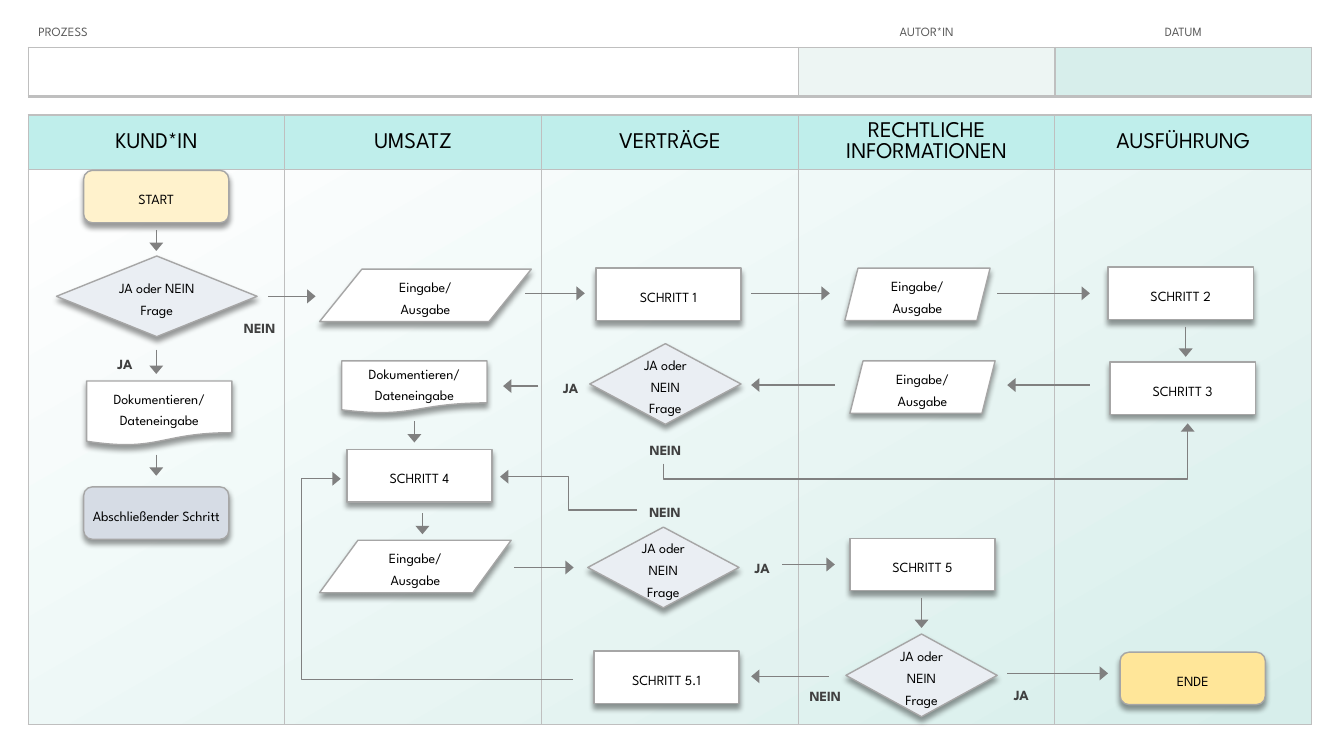
"""Build a swimlane process flowchart slide."""
from lxml import etree
from pptx import Presentation, util as u
from pptx.dml import color
from pptx.enum import shapes, text
from pptx.oxml import ns

COLORS = dict(white="FFFFFF", mint="D7EEEB", pale="EDF5F3", header="BFEEEB",
              grid="BFBFBF", edge="A6A6A6", arrow="808080", black="000000",
              label="404040", caption="595959", start="FFF2CC", end="FFE699",
              final="D6DCE5", decision="EAEEF3")
FONT = "League Spartan"
SHAPE = shapes.MSO_SHAPE
STRAIGHT, ELBOW = shapes.MSO_CONNECTOR.STRAIGHT, shapes.MSO_CONNECTOR.ELBOW
LEFT, LANE = 0.28, 2.546
BOX = (1.44, 0.52)
IO_TEXT = "Eingabe/\vAusgabe"
DOC_TEXT = "Dokumentieren/\nDateneingabe"


def rgb(name):
    return color.RGBColor.from_string(COLORS[name])


def inches(*values):
    return [u.Inches(v) for v in values]


def sub(parent, tag, **attrs):
    return etree.SubElement(parent, ns.qn(tag), attrs)


def write(tf, words, size, ink, bold=False, align=text.PP_ALIGN.CENTER, spacing=None):
    tf.text = words
    for p in tf.paragraphs:
        p.alignment = align
        p.line_spacing = spacing
        for r in p.runs:
            for key, value in dict(name=FONT, size=u.Pt(size), bold=bold).items():
                setattr(r.font, key, value)
            r.font.color.rgb = rgb(ink)


def write_box(sp, words, ink="black", bold=False):
    tf = sp.text_frame
    margins = {f"margin_{side}": u.Inches(0.02) for side in ("left", "right", "top", "bottom")}
    for key, value in dict(margins, word_wrap=True,
                           vertical_anchor=text.MSO_ANCHOR.MIDDLE).items():
        setattr(tf, key, value)
    write(tf, words, 10, ink, bold, spacing=1.3)


def add_node(parent, kind, x, y, words, fill="white", size=BOX):
    sp = parent.add_shape(kind, *inches(x, y, *size))
    sp.fill.solid()
    sp.fill.fore_color.rgb = rgb(fill)
    sp.line.color.rgb = rgb("edge")
    sp.line.width = u.Pt(1)
    sp.shadow.inherit = False
    effects = sp._element.spPr.find(ns.qn("a:effectLst"))
    shadow = sub(effects, "a:outerShdw", blurRad=str(u.Pt(4)), dist=str(u.Pt(3)),
                 dir="5400000", algn="t", rotWithShape="0")
    sub(sub(shadow, "a:srgbClr", val=COLORS["black"]), "a:alpha", val="40000")
    write_box(sp, words)


def add_decision(s, x, y, size, labels):
    group = s.shapes.add_group_shape().shapes
    add_node(group, SHAPE.FLOWCHART_DECISION, x, y, "JA oder NEIN\nFrage", "decision", size)
    for words, area in zip(("JA", "NEIN"), labels):
        write_box(group.add_textbox(*inches(*area)), words, "label", True)


def add_arrow(s, x1, y1, x2, y2, kind=STRAIGHT, bend=None, turn=None):
    line = s.shapes.add_connector(kind, *inches(x1, y1, x2, y2))
    line.line.color.rgb = rgb("arrow")
    line.line.width = u.Pt(1)
    props = line._element.spPr
    sub(props.find(ns.qn("a:ln")), "a:tailEnd", type="triangle", w="lg", len="med")
    sub(props, "a:effectLst")
    if bend is not None:
        guides = props.find(ns.qn("a:prstGeom")).find(ns.qn("a:avLst"))
        sub(guides, "a:gd", name="adj1", fmla=f"val {round(bend * 100000)}")
    if turn:
        props.find(ns.qn("a:xfrm")).set("rot", str(turn * 60000))


def set_borders(cell, widths):
    tc_pr = cell._tc.get_or_add_tcPr()
    for i, (side, width) in enumerate(zip("LRTB", widths)):
        ln = etree.Element(ns.qn(f"a:ln{side}"), w=str(u.Pt(width)))
        if width:
            sub(sub(ln, "a:solidFill"), "a:srgbClr", val=COLORS["grid"])
        else:
            sub(ln, "a:noFill")
        tc_pr.insert(i, ln)


def add_grid(s, y, widths, heights, titles, size, ink, fills, borders):
    frame = s.shapes.add_table(2, len(widths), *inches(LEFT, y, sum(widths), sum(heights)))
    table = frame.table
    table.first_row = table.horz_banding = False
    for column, width in zip(table.columns, widths):
        column.width = u.Inches(width)
    for row, height in zip(table.rows, heights):
        row.height = u.Inches(height)
    for i, row in enumerate(table.rows):
        for cell, fill in zip(row.cells, fills[i]):
            if fill:
                cell.fill.solid()
                cell.fill.fore_color.rgb = rgb(fill)
            else:
                cell.fill.background()
            set_borders(cell, borders[i])
    for cell, title in zip(table.rows[0].cells, titles):
        for key, value in dict(margin_left=0.01, margin_right=0.01,
                               margin_top=0.01, margin_bottom=0).items():
            setattr(cell, key, u.Inches(value))
        cell.vertical_anchor = text.MSO_ANCHOR.MIDDLE
        write(cell.text_frame, title, size, ink)
    return table


def add_background(s):
    sp = s.shapes.add_shape(SHAPE.RECTANGLE, *inches(LEFT, 1.6, 5 * LANE, 5.58))
    sp.shadow.inherit = False
    sp.line.fill.background()
    sp.fill.gradient()
    sp.fill.gradient_angle = 300
    for stop, name in zip(sp.fill.gradient_stops, ("white", "mint")):
        stop.color.rgb = rgb(name)


def add_tables(s):
    add_grid(s, 1.14, [LANE] * 5, [0.54, 5.51],
             ["KUND*IN", "UMSATZ", "VERTRÄGE", "RECHTLICHE INFORMATIONEN", "AUSFÜHRUNG"],
             16, "black", [["header"] * 5, [None] * 5], [[1] * 4] * 2)
    info = add_grid(s, 0.19, [3 * LANE, LANE, LANE], [0.28, 0.49],
                    ["PROZESS", "AUTOR*IN", "DATUM"], 9, "caption",
                    [[None] * 3, ["white", "pale", "mint"]], [[0, 0, 0, 1], [1, 1, 1, 2.25]])
    process = info.cell(0, 0)
    process.margin_left = u.Inches(0.1)
    process.text_frame.paragraphs[0].alignment = text.PP_ALIGN.LEFT


def add_nodes(s):
    steps = [("1", 5.91, 2.66), ("2", 10.99, 2.65), ("3", 11.01, 3.59),
             ("4", 3.44, 4.46), ("5", 8.43, 5.34), ("5.1", 5.89, 6.46)]
    for number, x, y in steps:
        add_node(s.shapes, SHAPE.FLOWCHART_PROCESS, x, y, f"SCHRITT {number}")
    for x, y, words, fill, kind in [
            (0.83, 1.69, "START", "start", SHAPE.FLOWCHART_ALTERNATE_PROCESS),
            (0.83, 4.83, "Abschließender Schritt", "final", SHAPE.FLOWCHART_ALTERNATE_PROCESS),
            (11.11, 6.47, "ENDE", "end", SHAPE.ROUNDED_RECTANGLE)]:
        add_node(s.shapes, kind, x, y, words, fill)
    for y, width in [(2.67, 2.1), (5.36, 1.9)]:
        add_node(s.shapes, SHAPE.FLOWCHART_DATA, 3.17, y, IO_TEXT, size=(width, 0.52))
    for x, y in [(8.38, 2.66), (8.43, 3.58)]:
        add_node(s.shapes, SHAPE.PARALLELOGRAM, x, y, IO_TEXT)
    for x, y, height in [(0.86, 3.78, 0.64), (3.39, 3.58, 0.52)]:
        add_node(s.shapes, SHAPE.FLOWCHART_DOCUMENT, x, y, DOC_TEXT, size=(1.44, height))
    for x, y, size, labels in [
            (0.56, 2.54, (1.99, 0.8), [(0.95, 3.45, 0.58, 0.27), (2.3, 3.09, 0.55, 0.27)]),
            (5.85, 3.41, (1.5, 0.8), [(5.47, 3.74, 0.38, 0.17), (6.42, 4.35, 0.36, 0.17)]),
            (5.83, 5.23, (1.5, 0.8), [(7.27, 5.47, 0.58, 0.27), (6.32, 4.92, 0.55, 0.27)]),
            (8.39, 6.29, (1.5, 0.82), [(9.84, 6.76, 0.58, 0.21), (7.91, 6.77, 0.55, 0.21)])]:
        add_decision(s, x, y, size, labels)


def add_arrows(s):
    across = [(2.94, 2.66, 3.13), (2.91, 5.21, 5.8), (2.91, 7.45, 8.23), (2.91, 9.89, 10.81),
              (3.82, 8.28, 7.45), (3.82, 10.81, 9.99), (3.83, 5.34, 4.99), (5.6, 7.76, 8.28),
              (5.63, 5.1, 5.69), (6.71, 8.22, 7.45), (6.68, 9.99, 10.99)]
    down = [(1.55, 2.28, 2.49), (1.55, 3.47, 3.71), (1.55, 4.51, 4.72), (4.11, 4.18, 4.39),
            (4.19, 5.09, 5.3), (9.14, 5.93, 6.23), (11.76, 3.24, 3.54)]
    for y, x1, x2 in across:
        add_arrow(s, x1, y, x2, y)
    for x, y1, y2 in down:
        add_arrow(s, x, y1, x, y2)
    add_arrow(s, 8.98, 1.8, 9.38, 7, ELBOW, bend=-0.38, turn=270)
    add_arrow(s, 6.32, 5.06, 4.96, 4.73, ELBOW, bend=0.5)
    add_arrow(s, 5.68, 6.74, 3.38, 4.75, ELBOW, bend=1.17)


def main():
    prs = Presentation()
    prs.slide_width, prs.slide_height = inches(13.33, 7.5)
    s = prs.slides.add_slide(prs.slide_layouts[6])
    add_background(s)
    add_tables(s)
    add_nodes(s)
    add_arrows(s)
    prs.save("out.pptx")


if __name__ == "__main__":
    main()
